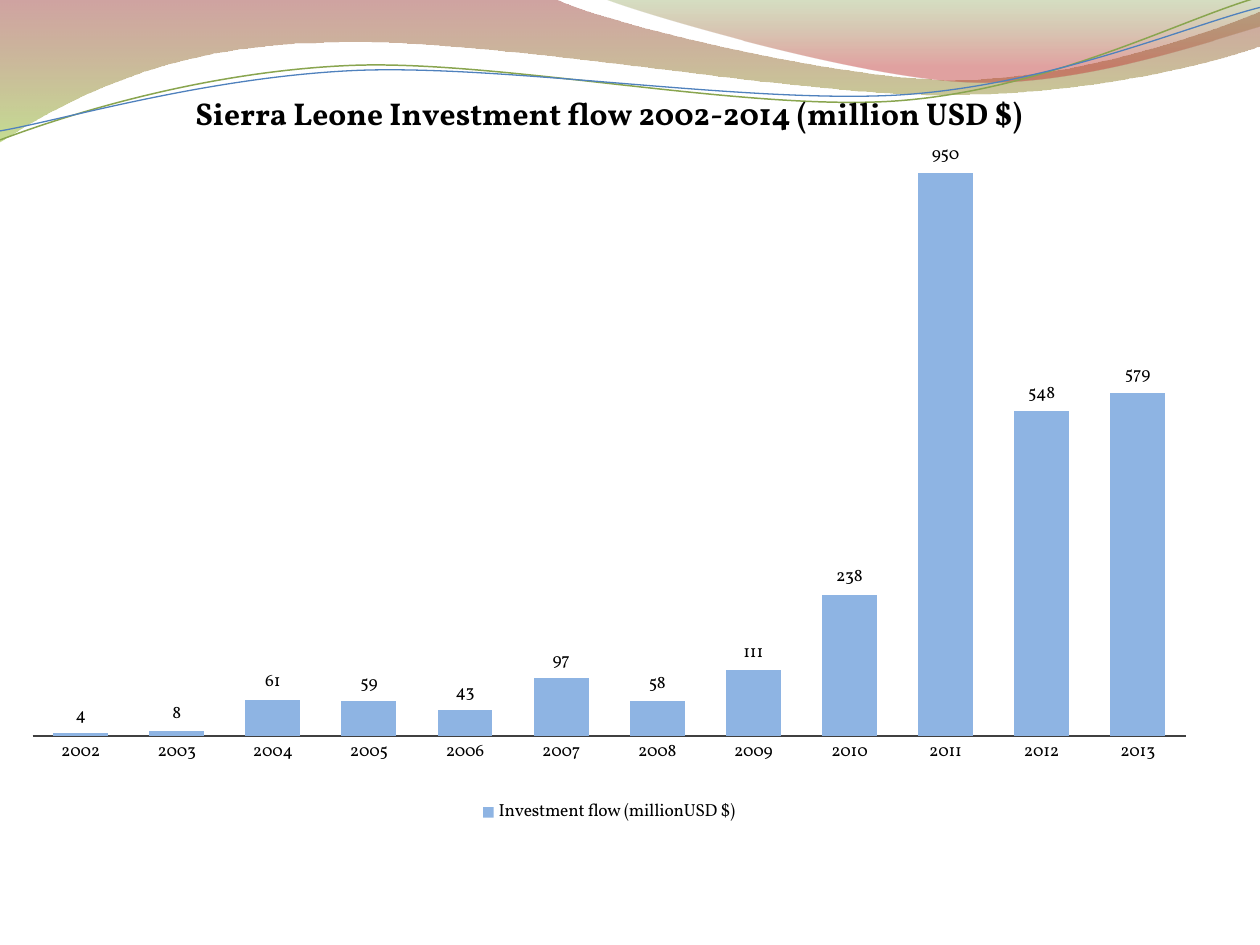
import math

import pptx
import pptx.chart.data
import pptx.dml.color
import pptx.enum.chart
import pptx.oxml
import pptx.oxml.ns
import pptx.util
from pptx.util import Cm, Pt

FONT = "Vollkorn"
YEARS = range(2002, 2014)
FLOWS = [4, 8, 61, 59, 43, 97, 58, 111, 238, 950, 548, 579]
TILT = -2.7

BANDS = [
    {
        "stops": [(0, "973330", 45), (1, "95C238", 55)],
        "segments": [
            [(0, -0.03)],
            [(11.18, -0.03)],
            [(12.09, 0.43), (16.87, 1.6), (19.25, 1.6)],
            [(21.67, 1.6), (24.33, 0.66), (25.4, 0.23)],
            [(25.43, 0.91)],
            [(24.97, 1.12), (22.1, 1.93), (18.95, 1.91)],
            [(15.8, 1.91), (9.7, 0.71), (6.53, 0.86)],
            [(3.28, 0.89), (1.17, 2.11), (-0.03, 2.87)],
        ],
    },
    {
        "stops": [(0, "769537", 30), (0.8, "BE3330", 45)],
        "segments": [
            [(12.17, -0.03)],
            [(12.93, 0.28), (17.32, 1.57), (19.53, 1.65)],
            [(21.74, 1.75), (24.41, 0.81), (25.4, 0.53)],
            [(25.4, 0)],
        ],
    },
]
STRANDS = [
    {
        "color": "89A54F",
        "width": 0.85,
        "center": (12.67, 1.46),
        "segments": [
            [(0, 2.82)],
            [(1.22, 2.36), (4.01, 1.45), (7.04, 1.32)],
            [(10.03, 1.19), (15.06, 2.26), (18.11, 2.03)],
            [(21.16, 1.8), (23.83, 0.38), (25.35, -0.05)],
        ],
    },
    {
        "color": "4F81BD",
        "width": 0.75,
        "center": (12.69, 1.5),
        "segments": [
            [(0, 2.64)],
            [(1.19, 2.44), (4.17, 1.55), (7.19, 1.42)],
            [(10.24, 1.3), (15.16, 2.11), (18.21, 1.91)],
            [(21.23, 1.7), (23.9, 0.53), (25.4, 0.15)],
        ],
    },
]


def rgb(value):
    return pptx.dml.color.RGBColor.from_string(value)


def set_values(target, values):
    for name, value in values.items():
        setattr(target, name, value)


def xml(tag, content=""):
    return pptx.oxml.parse_xml(
        f'<{tag} {pptx.oxml.ns.nsdecls("a", "c")}>{content}</{tag}>'
    )


def turn(point, center, degrees):
    angle = math.radians(degrees)
    across, down = point[0] - center[0], point[1] - center[1]
    return (
        center[0] + across * math.cos(angle) - down * math.sin(angle),
        center[1] + across * math.sin(angle) + down * math.cos(angle),
    )


def add_outline(shapes, left, top, segments, close):
    places = [[(left + Cm(x), top + Cm(y)) for x, y in part] for part in segments]
    ends = [part[-1] for part in places]
    builder = shapes.build_freeform(*ends[0])
    builder.add_line_segments(ends[1:], close=close)
    shape = builder.convert_to_shape()
    shape.shadow.inherit = False
    origin = [min(values) for values in zip(*ends)]
    lines = list(shape.element.spPr.iter(pptx.oxml.ns.qn("a:lnTo")))
    for line, part in zip(lines, places[1:]):
        if len(part) == 3:
            points = "".join(
                f'<a:pt x="{x - origin[0]}" y="{y - origin[1]}"/>' for x, y in part
            )
            line.getparent().replace(line, xml("a:cubicBezTo", points))
    return shape


def add_bands(page, left, top):
    for band in BANDS:
        shape = add_outline(page.shapes, left, top, band["segments"], True)
        shape.line.fill.background()
        shape.fill.gradient()
        shape.fill.gradient_angle = 270
        for stop, (position, color, _) in zip(shape.fill.gradient_stops, band["stops"]):
            stop.position = position
            stop.color.rgb = rgb(color)
        colors = shape.element.spPr.iter(pptx.oxml.ns.qn("a:srgbClr"))
        for color, (_, _, opacity) in zip(colors, band["stops"]):
            alpha = xml("a:alpha")
            alpha.set("val", str(opacity * 1000))
            color.append(alpha)


def add_strands(page, left, top):
    group = page.shapes.add_group_shape()
    for strand in STRANDS:
        level = [
            [turn(point, strand["center"], -TILT) for point in part]
            for part in strand["segments"]
        ]
        shape = add_outline(group.shapes, left, top, level, False)
        shape.rotation = TILT
        shape.fill.background()
        shape.line.color.rgb = rgb(strand["color"])
        shape.line.width = Pt(strand["width"])


def add_flow_chart(page, left, top, width, height):
    kinds = pptx.enum.chart
    data = pptx.chart.data.CategoryChartData()
    data.categories = YEARS
    data.add_series("Investment flow (millionUSD $)", FLOWS)
    chart = page.shapes.add_chart(
        kinds.XL_CHART_TYPE.COLUMN_CLUSTERED, left, top, width, height, data
    ).chart
    set_values(chart.font, {"name": FONT, "size": Pt(10)})
    chart.font.color.rgb = rgb("000000")
    chart.element.find(pptx.oxml.ns.qn("c:txPr")).addprevious(
        xml("c:spPr", "<a:noFill/><a:ln><a:noFill/></a:ln>")
    )

    chart.has_title = True
    para = chart.chart_title.text_frame.paragraphs[0]
    span = para.add_run()
    span.text = "Sierra Leone Investment flow 2002-2014 (million USD $)"
    set_values(span.font, {"name": FONT, "size": Pt(18), "bold": True})
    span.font.color.rgb = rgb("000000")

    chart.has_legend = True
    set_values(
        chart.legend,
        {"position": kinds.XL_LEGEND_POSITION.BOTTOM, "include_in_layout": False},
    )
    set_values(
        chart.value_axis,
        {
            "minimum_scale": 0,
            "maximum_scale": 1000,
            "has_major_gridlines": False,
            "visible": False,
        },
    )
    none = kinds.XL_TICK_MARK.NONE
    set_values(chart.category_axis, {"major_tick_mark": none, "minor_tick_mark": none})
    axis_line = chart.category_axis.format.line
    axis_line.color.rgb = rgb("404040")
    axis_line.width = Pt(1)

    plot = chart.plots[0]
    set_values(
        plot,
        {
            "gap_width": 75,
            "overlap": -25,
            "vary_by_categories": False,
            "has_data_labels": True,
        },
    )
    set_values(
        plot.data_labels,
        {"show_value": True, "position": kinds.XL_LABEL_POSITION.OUTSIDE_END},
    )
    fill = plot.series[0].format.fill
    fill.solid()
    fill.fore_color.rgb = rgb("8EB4E3")

    plot_area = chart.element.find(".//" + pptx.oxml.ns.qn("c:plotArea"))
    for layout in plot_area.findall(pptx.oxml.ns.qn("c:layout")):
        plot_area.remove(layout)
    settings = {"layoutTarget": "inner", "xMode": "edge", "yMode": "edge"}
    settings.update(x=0, y=0.104, w=1, h=0.774)
    content = "".join(f'<c:{key} val="{value}"/>' for key, value in settings.items())
    plot_area.insert(
        0, xml("c:layout", f"<c:manualLayout>{content}</c:manualLayout>")
    )


def main():
    deck = pptx.Presentation()
    set_values(deck, {"slide_width": Cm(25.4), "slide_height": Cm(19.05)})
    page = deck.slides.add_slide(deck.slide_layouts[6])
    add_bands(page, Cm(0), Cm(0))
    add_strands(page, Cm(0), Cm(0))
    add_flow_chart(page, Cm(0.64), Cm(1.28), Cm(23.28), Cm(15.44))
    deck.save("out.pptx")


if __name__ == "__main__":
    main()
